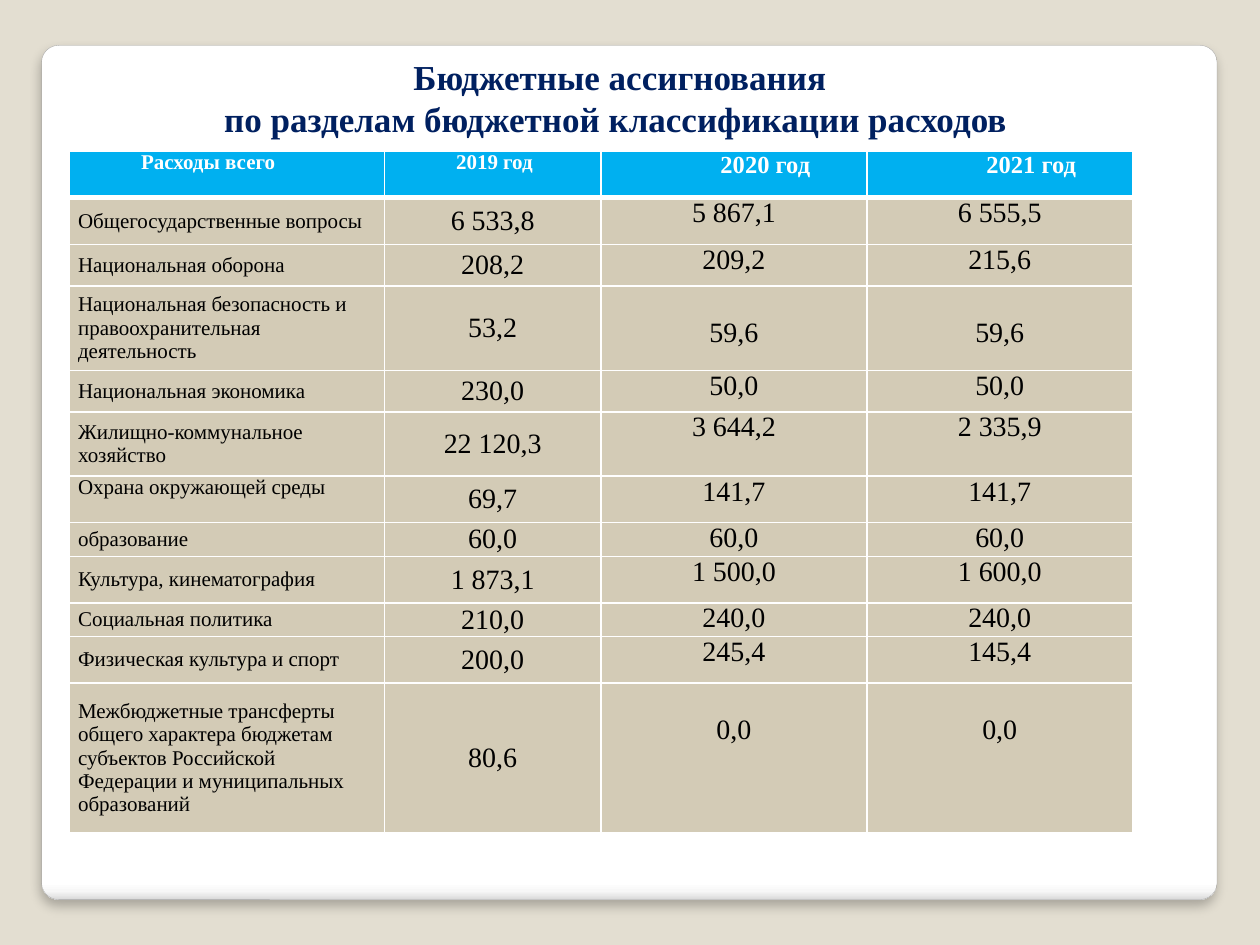
from dataclasses import dataclass

from lxml import etree
from pptx import Presentation
from pptx.dml.color import RGBColor
from pptx.enum.shapes import MSO_SHAPE
from pptx.enum.text import MSO_ANCHOR, PP_ALIGN
from pptx.oxml import parse_xml
from pptx.oxml.ns import nsdecls, qn
from pptx.util import Inches, Pt

ROUNDED = MSO_SHAPE.ROUNDED_RECTANGLE
LEFT, CENTER = PP_ALIGN.LEFT, PP_ALIGN.CENTER
TOP, MIDDLE = MSO_ANCHOR.TOP, MSO_ANCHOR.MIDDLE


@dataclass(frozen=True)
class Theme:
    font: str = "Times New Roman"
    background: str = "E3DED1"
    panel_line: str = "A4A4A4"
    title: str = "002060"
    header: str = "00B0F0"
    body: str = "D3CBB6"
    white: str = "FFFFFF"
    black: str = "000000"
    title_size: int = 20
    label_size: int = 12
    header_size: int = 14
    value_size: int = 16


THEME = Theme()
PANEL_STOPS = [(0, "FFFFFF"), (98, "FFFFFF"), (99, "F7F7F7"), (100, "DADADA")]

# The slide is a grid of 1000 columns by 750 rows
GRID_COLUMNS, GRID_ROWS = 1000, 750
GRID = Inches(10) // GRID_COLUMNS
COLUMN_WIDTHS = [250, 172, 211, 211]
HEADER_HEIGHT = 37
INDENT = 50
SIDE_MARGIN = 7
LINE_DROP = 25  # values in the tall rows start one line lower

TITLE_LINES = ["Бюджетные ассигнования", "по разделам бюджетной классификации расходов "]
HEADERS = ["Расходы всего", "2019 год", "2020 год", "2021 год"]
# height, section, values by year
EXPENSES = [
    (37, "Общегосударственные вопросы", "6 533,8", "5 867,1", "6 555,5"),
    (33, "Национальная оборона", "208,2", "209,2", "215,6"),
    (67, "Национальная безопасность и правоохранительная деятельность",
     "53,2", "59,6", "59,6"),
    (33, "Национальная экономика", "230,0", "50,0", "50,0"),
    (51, "Жилищно-коммунальное хозяйство", "22 120,3", "3 644,2", "2 335,9"),
    (37, "Охрана окружающей среды", "69,7", "141,7", "141,7"),
    (23, "образование", "60,0", "60,0", "60,0"),
    (37, "Культура, кинематография", "1 873,1", "1 500,0", "1 600,0"),
    (22, "Социальная политика", "210,0", "240,0", "240,0"),
    (37, "Физическая культура и спорт", "200,0", "245,4", "145,4"),
    (119, "Межбюджетные трансферты общего характера бюджетам субъектов "
          "Российской Федерации и муниципальных образований",
     "80,6", "0,0", "0,0"),
]
TOP_LABEL = "Охрана окружающей среды"
TALL_ROW = 60


def add_run(paragraph, text, size, color, bold=False):
    run = paragraph.add_run()
    run.text = text
    run.font.name = THEME.font
    run.font.size = Pt(size)
    run.font.bold = bold
    run.font.color.rgb = RGBColor.from_string(color)


def style_cell(cell, fill, bottom_width):
    """Set margins, white borders and fill; borders must precede the fill."""
    cell.margin_left = cell.margin_right = SIDE_MARGIN * GRID
    cell.margin_top = cell.margin_bottom = 0
    properties = cell._tc.get_or_add_tcPr()
    for side, width in (("L", 1), ("R", 1), ("T", 1), ("B", bottom_width)):
        properties.append(parse_xml(
            f'<a:ln{side} {nsdecls("a")} w="{Pt(width)}"><a:solidFill>'
            f'<a:srgbClr val="{THEME.white}"/></a:solidFill></a:ln{side}>'))
    cell.fill.solid()
    cell.fill.fore_color.rgb = RGBColor.from_string(fill)


deck = Presentation()
deck.slide_width = GRID_COLUMNS * GRID
deck.slide_height = GRID_ROWS * GRID
slide = deck.slides.add_slide(deck.slide_layouts[6])
slide.background.fill.solid()
slide.background.fill.fore_color.rgb = RGBColor.from_string(THEME.background)

# Panel with a soft lower edge
panel = slide.shapes.add_shape(ROUNDED, 33 * GRID, 36 * GRID, 933 * GRID, 678 * GRID)
panel.adjustments[0] = 0.02
panel.line.color.rgb = RGBColor.from_string(THEME.panel_line)
panel.line.width = Pt(0.16)
panel.fill.gradient()
panel.fill.gradient_angle = 270
stops = panel._element.spPr.find(f".//{qn('a:gsLst')}")
for stop in list(stops):
    stops.remove(stop)
for position, color in PANEL_STOPS:
    stop = etree.SubElement(stops, qn("a:gs"), pos=str(position * 1000))
    etree.SubElement(stop, qn("a:srgbClr"), val=color)
panel.shadow.inherit = False
panel._element.spPr.find(qn("a:effectLst")).append(parse_xml(
    f'<a:outerShdw {nsdecls("a")} blurRad="{Pt(6)}" dist="{Pt(4)}" dir="5400000" '
    f'rotWithShape="0"><a:srgbClr val="{THEME.black}"><a:alpha val="25000"/>'
    '</a:srgbClr></a:outerShdw>'))

# Title
title = slide.shapes.add_textbox(78 * GRID, 39 * GRID, 828 * GRID, 77 * GRID)
title.text_frame.word_wrap = True
heading = title.text_frame.paragraphs[0]
heading.alignment = CENTER
for number, line in enumerate(TITLE_LINES):
    if number:
        heading.add_line_break()
    add_run(heading, line, THEME.title_size, THEME.title, bold=True)

# Expense table
heights = [HEADER_HEIGHT] + [height for height, *_ in EXPENSES]
table = slide.shapes.add_table(
    len(heights), len(COLUMN_WIDTHS), 55 * GRID, 120 * GRID,
    sum(COLUMN_WIDTHS) * GRID, sum(heights) * GRID).table
for column, width in zip(table.columns, COLUMN_WIDTHS):
    column.width = width * GRID
for row, height in zip(table.rows, heights):
    row.height = height * GRID

for column, text in enumerate(HEADERS):
    cell = table.cell(0, column)
    style_cell(cell, THEME.header, 3)
    paragraph = cell.text_frame.paragraphs[0]
    later_year = column >= 2
    paragraph.alignment = CENTER if later_year else LEFT
    indent = paragraph._p.get_or_add_pPr()
    indent.set("marL", "0")
    indent.set("indent", str(INDENT * GRID))
    size = THEME.header_size if later_year else THEME.label_size
    add_run(paragraph, text, size, THEME.white, bold=True)

for row, (height, *texts) in enumerate(EXPENSES, start=1):
    for column, text in enumerate(texts):
        cell = table.cell(row, column)
        style_cell(cell, THEME.body, 1)
        later_year = column >= 2
        cell.vertical_anchor = TOP if later_year or text == TOP_LABEL else MIDDLE
        if later_year and height > TALL_ROW:
            cell.margin_top = LINE_DROP * GRID
        paragraph = cell.text_frame.paragraphs[0]
        paragraph.alignment = CENTER if column else LEFT
        size = THEME.value_size if column else THEME.label_size
        add_run(paragraph, text, size, THEME.black)

deck.save("out.pptx")
